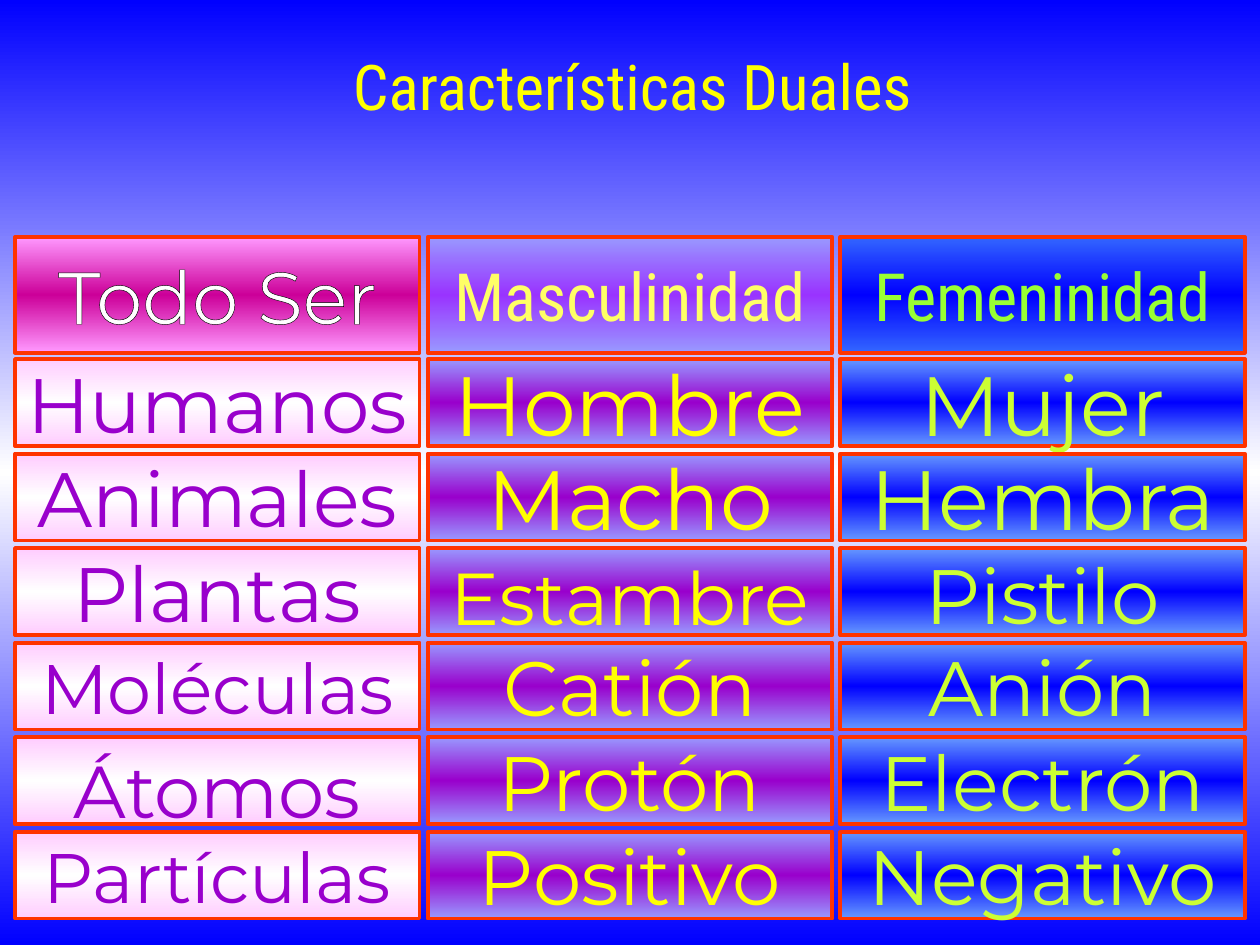
from lxml import etree
from pptx import Presentation
from pptx.dml.color import RGBColor
from pptx.enum.shapes import MSO_SHAPE
from pptx.enum.text import MSO_ANCHOR, PP_ALIGN
from pptx.oxml import parse_xml
from pptx.oxml.ns import nsdecls, qn
from pptx.util import Inches, Pt

RECTANGLE = MSO_SHAPE.RECTANGLE
CENTER = PP_ALIGN.CENTER
TOP, MIDDLE = MSO_ANCHOR.TOP, MSO_ANCHOR.MIDDLE

BODY_FONT = "Montserrat"
TITLE_FONT = "Roboto Condensed"
COLORS = {
    "border": "FF3300", "outline": "000000", "title_outline": "000099",
    "blue": "0000FF", "white": "FFFFFF", "yellow": "FFFF00", "orange": "FF9933",
}

TITLE = "Características Duales"
# text, size, font, text colour, edge colour, middle colour
HEADERS = [
    ("Todo Ser", 42, BODY_FONT, "FFFFFF", "FF99FF", "CC0099"),
    ("Masculinidad", 38, TITLE_FONT, "FFFF66", "9999FF", "9933FF"),
    ("Femeninidad", 38, TITLE_FONT, "99FF33", "3366FF", "0000FF"),
]
# text colour, edge colour, middle colour of each column
COLUMN_STYLES = [
    ("9900CC", "FFCCFF", "FFFFFF"),
    ("FFFF00", "9999FF", "9900CC"),
    ("CCFF33", "6699FF", "0000FF"),
]
# text, size and, where it is not single, line spacing
ROWS = [
    [("Humanos", 44), ("Hombre", 48), ("Mujer", 48)],
    [("Animales", 44), ("Macho", 48), ("Hembra", 48)],
    [("Plantas", 44), ("Estambre", 42, 1.1), ("Pistilo", 44, 1.05)],
    [("Moléculas", 40), ("Catión", 44), ("Anión", 44)],
    [("Átomos", 42, 1.2), ("Protón", 44), ("Electrón", 44)],
    [("Partículas", 40), ("Positivo", 44), ("Negativo", 44)],
]

LEFT, COLUMN_STEP, CELL_WIDTH = 0.12, 3.275, 3.21
HEADER_TOP, HEADER_HEIGHT = 1.88, 0.92
ROWS_TOP, ROW_STEP, ROW_HEIGHT = 2.85, 0.75, 0.69

VERTICAL = '<a:lin ang="5400000" scaled="0"/>'
FROM_CENTER = ('<a:path path="rect"><a:fillToRect l="50000" t="50000" '
               'r="50000" b="50000"/></a:path>')


def paint_gradient(fill, parent, colors, direction=VERTICAL):
    """Give the fill held by parent evenly spaced gradient stops."""
    fill.solid()
    step = 100000 // (len(colors) - 1)
    stops = "".join(
        f'<a:gs pos="{index * step}"><a:srgbClr val="{color}"/></a:gs>'
        for index, color in enumerate(colors))
    gradient = parse_xml(f'<a:gradFill {nsdecls("a")} rotWithShape="1">'
                         f'<a:gsLst>{stops}</a:gsLst>{direction}</a:gradFill>')
    parent.replace(parent.find(qn("a:solidFill")), gradient)


def outline_text(properties, color, width):
    line = etree.Element(qn("a:ln"), w=str(Pt(width)))
    solid = etree.SubElement(line, qn("a:solidFill"))
    etree.SubElement(solid, qn("a:srgbClr"), val=color)
    properties.insert(0, line)


def write_text(shape, text, size, font_name, anchor, spacing=None):
    """Write one centred line and return its span."""
    frame = shape.text_frame
    frame.word_wrap = False
    frame.vertical_anchor = anchor
    para = frame.paragraphs[0]
    para.alignment = CENTER
    if spacing:
        para.line_spacing = spacing
    span = para.add_run()
    span.text = text
    span.font.size = Pt(size)
    span.font.name = font_name
    return span


def add_cell(slide, column, top, height, text, size, font_name, colors, spacing=None):
    text_color, edge, middle = colors
    box = slide.shapes.add_shape(
        RECTANGLE, Inches(LEFT + column * COLUMN_STEP), Inches(top),
        Inches(CELL_WIDTH), Inches(height))
    box.shadow.inherit = False
    paint_gradient(box.fill, box.element.spPr, [edge, middle, edge])
    box.line.color.rgb = RGBColor.from_string(COLORS["border"])
    box.line.width = Pt(2.25)
    span = write_text(box, text, size, font_name, MIDDLE, spacing)
    span.font.color.rgb = RGBColor.from_string(text_color)
    outline_text(span.font.fill and span._r.get_or_add_rPr(), COLORS["outline"], 0.75)


def add_title(slide):
    box = slide.shapes.add_textbox(Inches(0.44), Inches(0.33), Inches(9.16), Inches(1.08))
    span = write_text(box, TITLE, 36, TITLE_FONT, TOP)
    properties = span._r.get_or_add_rPr()
    paint_gradient(span.font.fill, properties,
                   [COLORS["yellow"], COLORS["orange"]], FROM_CENTER)
    outline_text(properties, COLORS["title_outline"], 3)


def main():
    deck = Presentation()
    deck.slide_width, deck.slide_height = Inches(10), Inches(7.5)
    slide = deck.slides.add_slide(deck.slide_layouts[6])
    background = slide.background.fill
    background.solid()
    paint_gradient(background, slide.element.find(".//" + qn("p:bgPr")),
                   [COLORS["blue"], COLORS["white"], COLORS["blue"]])

    for column, (text, size, font_name, *colors) in enumerate(HEADERS):
        add_cell(slide, column, HEADER_TOP, HEADER_HEIGHT, text, size, font_name, colors)
    for row, cells in enumerate(ROWS):
        top = ROWS_TOP + row * ROW_STEP
        for column, (text, size, *spacing) in enumerate(cells):
            add_cell(slide, column, top, ROW_HEIGHT, text, size, BODY_FONT,
                     COLUMN_STYLES[column], *spacing)
    add_title(slide)
    deck.save("out.pptx")


if __name__ == "__main__":
    main()
